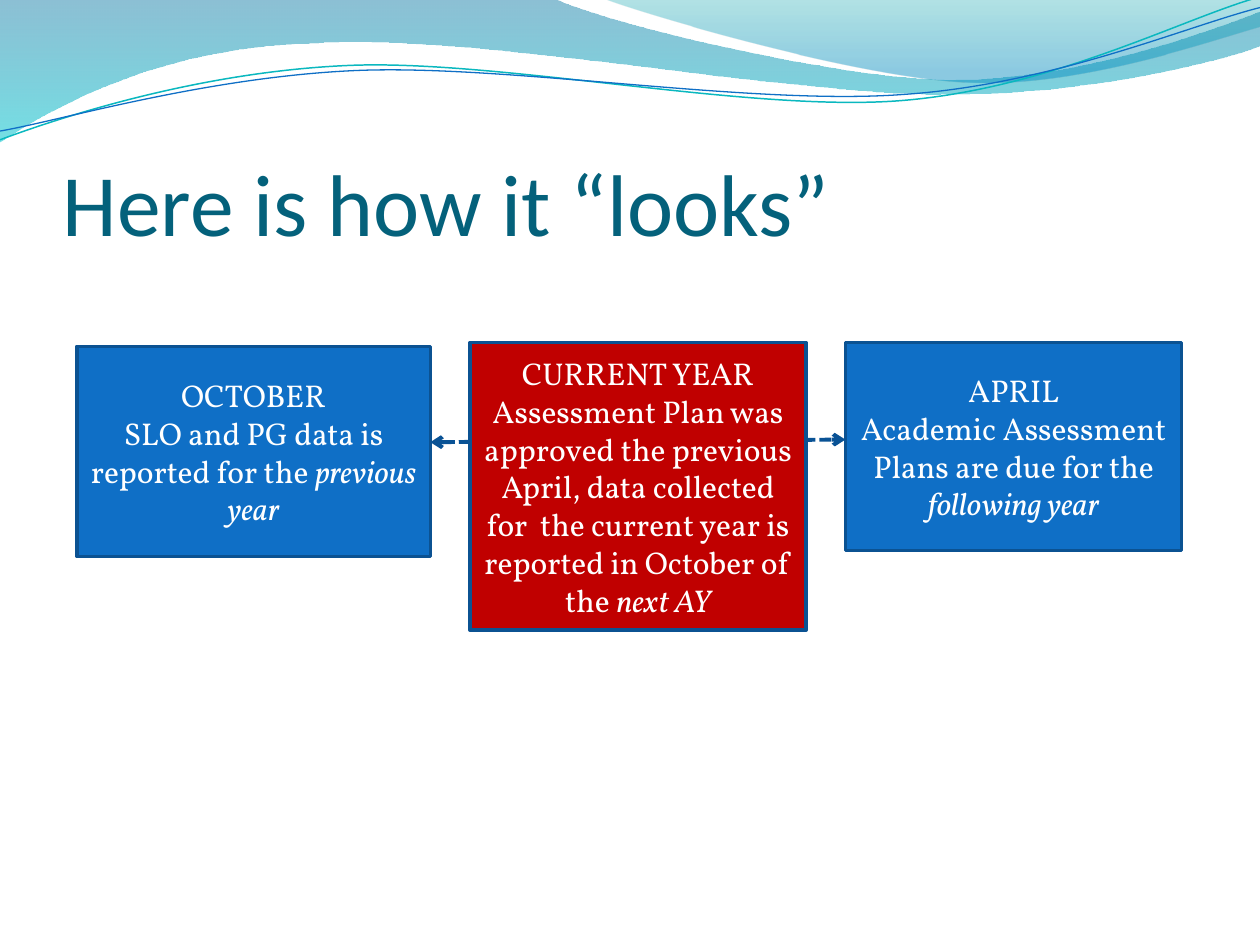
from dataclasses import dataclass
from math import cos, radians, sin

from lxml import etree
from pptx import Presentation
from pptx.dml.color import RGBColor
from pptx.enum.dml import MSO_LINE
from pptx.enum.shapes import MSO_CONNECTOR, MSO_SHAPE
from pptx.enum.text import MSO_ANCHOR, PP_ALIGN
from pptx.oxml.ns import qn
from pptx.util import Pt

PROCESS = MSO_SHAPE.FLOWCHART_PROCESS
STRAIGHT = MSO_CONNECTOR.STRAIGHT
SYS_DASH = MSO_LINE.SQUARE_DOT
MIDDLE, BOTTOM = MSO_ANCHOR.MIDDLE, MSO_ANCHOR.BOTTOM
CENTER = PP_ALIGN.CENTER
STRAND_TILT = -2.7


@dataclass(frozen=True)
class Theme:
    title: str = "04617B"
    blue: str = "0F6FC6"
    teal: str = "0AB8BF"
    red: str = "C00000"
    border: str = "0B5292"
    arrow: str = "095295"
    white: str = "FFFFFF"
    title_font: str = "Calibri"
    body_font: str = "Vollkorn"
    title_size: float = 50
    body_size: float = 18


THEME = Theme()

# Outlines in points: one pair is a straight step, three pairs a Bézier curve
# Each band: box, outline, gradient stops (position, colour, opacity %)
BANDS = [
    ((-0.7, -0.7, 721.4, 82.1),
     [[(0, 0)], [(316.8, -0.7)],
      [(342.7, 12.2), (478.1, 45.4), (545.8, 45.4)],
      [(614.2, 45.4), (689.8, 18.7), (720, 6.5)],
      [(720.7, 25.9)],
      [(707.8, 31.7), (626.4, 54.7), (537.1, 54)],
      [(447.8, 54), (275, 20.2), (185, 24.5)],
      [(92.9, 25.9), (33.1, 59.8), (-0.7, 81.4)],
      [(0, 0)]],
     [(0, "0074A1", 45), (1, "00C6CF", 55)]),
    ((344.9, -0.7, 375.1, 50.4),
     [[(344.9, -0.7)],
      [(366.5, 7.9), (491, 44.6), (553.7, 46.8)],
      [(616.3, 49.7), (691.9, 23), (720, 15.1)],
      [(720, 0)], [(344.9, -0.7)]],
     [(0, "00A1A9", 30), (0.8, "008BBF", 45)]),
]
# Each strand: box before tilting, outline after tilting, colour, width
STRANDS = [
    ((-1.4, 15.8, 721.4, 51.1),
     [[(0, 79.9)],
      [(34.6, 67), (113.8, 41), (199.4, 37.4)],
      [(284.4, 33.8), (427, 64.1), (513.4, 57.6)],
      [(599.8, 51.1), (675.4, 10.8), (718.6, -1.4)]], THEME.teal, 0.85),
    ((-1.4, 21.6, 722.2, 41.8),
     [[(0, 74.9)],
      [(33.8, 69.1), (118.1, 43.9), (203.8, 40.3)],
      [(290.2, 36.7), (429.8, 60.5), (516.2, 54)],
      [(601.9, 48.2), (677.5, 15.1), (720, 4.3)]], THEME.blue, 0.75),
]

# Heading, sentence, italic ending
OCTOBER = ("OCTOBER", "SLO and PG data is reported for the ", "previous year")
APRIL = ("APRIL", "Academic Assessment Plans are due for the ", "following year")
CURRENT = ("CURRENT YEAR",
           "Assessment Plan was approved the previous April, data collected "
           "for  the current year is reported in October of the ", "next AY")


def rgb(value):
    return RGBColor.from_string(value)


def set_line(line, color, width):
    line.color.rgb = rgb(color)
    line.width = Pt(width)


def add_run(paragraph, text, **format_values):
    run = paragraph.add_run()
    run.text = text
    color = format_values.pop("color")
    for attribute, value in format_values.items():
        setattr(run.font, attribute, value)
    run.font.color.rgb = rgb(color)


def add_wave(slide, box, outline, close, tilt=0):
    left, top, width, height = box
    anchors = [tuple(map(Pt, step[-1])) for step in outline]
    builder = slide.shapes.build_freeform(*anchors[0])
    builder.add_line_segments(anchors[1:], close=close)
    wave = builder.convert_to_shape()
    wave.shadow.inherit = False
    wave.left, wave.top, wave.width, wave.height = map(Pt, box)
    wave.rotation = tilt % 360

    # Replace the straight steps by curves, measured within the untilted box
    turn = radians(-tilt)
    curve = next(wave._element.iter(qn("a:path")))
    for step in list(curve):
        curve.remove(step)
    curve.set("w", str(Pt(width)))
    curve.set("h", str(Pt(height)))
    for index, points in enumerate(outline):
        tag = "a:cubicBezTo" if len(points) == 3 else "a:lnTo" if index else "a:moveTo"
        step = etree.SubElement(curve, qn(tag))
        for x, y in points:
            dx, dy = x - left - width / 2, y - top - height / 2
            local_x = width / 2 + dx * cos(turn) - dy * sin(turn)
            local_y = height / 2 + dx * sin(turn) + dy * cos(turn)
            etree.SubElement(step, qn("a:pt"), x=str(Pt(local_x)), y=str(Pt(local_y)))
    if close:
        etree.SubElement(curve, qn("a:close"))
    return wave


def add_header(slide, origin):
    def place(box):
        return (origin[0] + box[0], origin[1] + box[1], *box[2:])

    # Translucent bands
    for box, outline, stops in BANDS:
        band = add_wave(slide, place(box), outline, True)
        band.line.fill.background()
        band.fill.gradient()
        band.fill.gradient_angle = 270
        for stop, (position, color, _) in zip(band.fill.gradient_stops, stops):
            stop.position = position
            stop.color.rgb = rgb(color)
        colors = band._element.spPr.iter(qn("a:srgbClr"))
        for node, (_, _, opacity) in zip(colors, stops):
            etree.SubElement(node, qn("a:alpha"), val=str(opacity * 1000))
    # Thin strands
    for box, outline, color, width in STRANDS:
        strand = add_wave(slide, place(box), outline, False, STRAND_TILT)
        strand.fill.background()
        set_line(strand.line, color, width)


def add_title(slide, box, text):
    frame = slide.shapes.add_textbox(*map(Pt, box)).text_frame
    settings = dict(word_wrap=True, vertical_anchor=BOTTOM, margin_left=0,
                    margin_top=Pt(3.6), margin_right=0, margin_bottom=0)
    for attribute, value in settings.items():
        setattr(frame, attribute, value)
    add_run(frame.paragraphs[0], text, size=Pt(THEME.title_size),
            name=THEME.title_font, color=THEME.title)


def add_step(slide, box, content, fill):
    step = slide.shapes.add_shape(PROCESS, *map(Pt, box))
    step.shadow.inherit = False
    step.fill.solid()
    step.fill.fore_color.rgb = rgb(fill)
    set_line(step.line, THEME.border, 2)
    frame = step.text_frame
    frame.word_wrap = True
    frame.vertical_anchor = MIDDLE
    heading, sentence, ending = content
    body = dict(size=Pt(THEME.body_size), name=THEME.body_font, color=THEME.white)
    first, second = frame.paragraphs[0], frame.add_paragraph()
    first.alignment = second.alignment = CENTER
    add_run(first, heading, **body)
    add_run(second, sentence, **body)
    add_run(second, ending, italic=True, **body)


def add_double_arrow(slide, start, end):
    arrow = slide.shapes.add_connector(STRAIGHT, *map(Pt, start + end))
    set_line(arrow.line, THEME.arrow, 2.25)
    arrow.line.dash_style = SYS_DASH
    outline = arrow.line._get_or_add_ln()
    for tag in ("a:headEnd", "a:tailEnd"):
        etree.SubElement(outline, qn(tag), type="arrow")
    etree.SubElement(arrow._element.spPr, qn("a:effectLst"))


def add_timeline(slide, box):
    left, top, width, height = box
    side, october_width = 192.2, 202
    april_left = left + width - side
    add_step(slide, (left, top + 2.2, october_width, 120), OCTOBER, THEME.blue)
    add_step(slide, (april_left, top, side, 118.8), APRIL, THEME.blue)
    # The arrow runs behind the current year
    add_double_arrow(slide, (left + october_width, top + 56.9), (april_left, top + 55.4))
    add_step(slide, (left + 224.6, top, side, height), CURRENT, THEME.red)


def main():
    deck = Presentation()
    deck.slide_width, deck.slide_height = Pt(720), Pt(540)
    slide = deck.slides.add_slide(deck.slide_layouts[6])
    add_header(slide, (0, 0))
    add_title(slide, (36, 55.4, 648, 90), "Here is how it “looks”")
    add_timeline(slide, (43.9, 195.8, 631.4, 164.2))
    deck.save("out.pptx")


if __name__ == "__main__":
    main()
